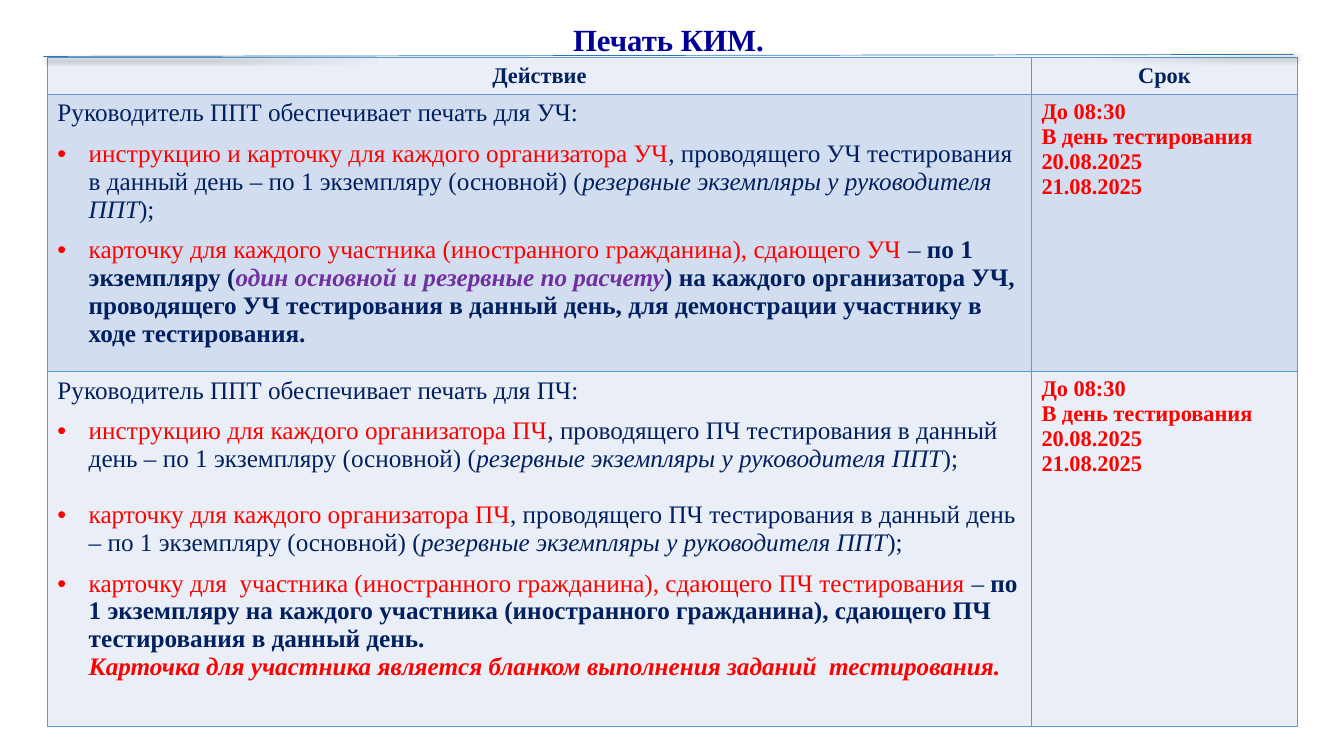
import lxml.etree
import pptx
import pptx.dml.color
import pptx.enum.shapes
import pptx.enum.text
import pptx.oxml
import pptx.oxml.ns
import pptx.util

Inches = pptx.util.Inches
ALIGN = pptx.enum.text.PP_ALIGN
ANCHOR = pptx.enum.text.MSO_ANCHOR
FONT = "Times New Roman"
NAVY, RED, PURPLE = "002060", "FF0000", "7030A0"
BORDER, PALE, BLUE = "5B9BD5", "EAEFF7", "D2DEEF"
INDENT = Inches(0.31)

HEADERS = ["Действие", "Срок"]
DEADLINE = ["До 08:30", "В день тестирования", "20.08.2025", "21.08.2025"]
BASIC_COPY = [
    ("день – по 1 экземпляру (основной) (", {}),
    ("резервные экземпляры у руководителя ППТ", {"italic": True}),
    (");", {}),
]


def basic_copy(subject, part):
    """Return the runs of an item that asks for one basic copy."""
    lead = f", проводящего {part} тестирования в данный "
    return [(subject, {"color": RED}), (lead, {})] + BASIC_COPY


ORAL_ITEMS = [
    (9, True, basic_copy("инструкцию и карточку для каждого организатора УЧ", "УЧ")),
    (9, True, [
        ("карточку для каждого участника (иностранного гражданина), сдающего УЧ ", {"color": RED}),
        ("– ", {}),
        ("по 1 экземпляру (", {"bold": True}),
        ("один основной и резервные по расчету", {"color": PURPLE, "bold": True, "italic": True}),
        (") на каждого организатора УЧ, проводящего УЧ тестирования в данный день, "
         "для демонстрации участнику в ходе тестирования.", {"bold": True}),
    ]),
]
WRITTEN_ITEMS = [
    (9, True, basic_copy("инструкцию для каждого организатора ПЧ", "ПЧ")),
    (20, True, basic_copy("карточку для каждого организатора ПЧ", "ПЧ")),
    (9, True, [
        ("карточку для  участника (иностранного гражданина), сдающего ПЧ тестирования ", {"color": RED}),
        ("– ", {}),
        ("по 1 экземпляру на каждого участника (иностранного гражданина), "
         "сдающего ПЧ тестирования в данный день.", {"bold": True}),
    ]),
    (0, False, [("Карточка для участника является бланком выполнения заданий  тестирования.",
                 {"color": RED, "bold": True, "italic": True})]),
]
SECTIONS = [("УЧ", ORAL_ITEMS, BLUE), ("ПЧ", WRITTEN_ITEMS, PALE)]


def rgb(value):
    """Turn a hex string into a colour."""
    return pptx.dml.color.RGBColor.from_string(value)


def add_text(para, text, size=18, color=NAVY, bold=False, italic=False):
    """Append a formatted span to a paragraph."""
    span = para.add_run()
    span.text = text
    span.font.name = FONT
    span.font.size = pptx.util.Pt(size)
    span.font.bold = bold
    span.font.italic = italic
    span.font.color.rgb = rgb(color)


def next_para(frame):
    """Return the empty first paragraph or a new one."""
    first = frame.paragraphs[0]
    return frame.add_paragraph() if first.runs else first


def indent_para(para, bulleted):
    """Indent a paragraph and hang a bullet if asked."""
    properties = para._p.get_or_add_pPr()
    properties.set("marL", str(INDENT))
    properties.set("indent", str(-INDENT if bulleted else 0))
    if bulleted:
        font = lxml.etree.SubElement(properties, pptx.oxml.ns.qn("a:buFont"))
        font.set("typeface", "Arial")
        bullet = lxml.etree.SubElement(properties, pptx.oxml.ns.qn("a:buChar"))
        bullet.set("char", "•")


def style_cell(cell, fill):
    """Give a cell its borders and fill."""
    properties = cell._tc.get_or_add_tcPr()
    for side in ("lnL", "lnR", "lnT", "lnB"):
        properties.append(pptx.oxml.parse_xml(
            f'<a:{side} {pptx.oxml.ns.nsdecls("a")} w="12700"><a:solidFill>'
            f'<a:srgbClr val="{BORDER}"/></a:solidFill></a:{side}>'))
    cell.fill.solid()
    cell.fill.fore_color.rgb = rgb(fill)


def add_title(page, left, top, width, height):
    """Place the heading at the bottom of its box."""
    box = page.shapes.add_textbox(left, top, width, height)
    frame = box.text_frame
    frame.word_wrap = True
    frame.vertical_anchor = ANCHOR.BOTTOM
    para = frame.paragraphs[0]
    para.alignment = ALIGN.CENTER
    para.line_spacing = 0.9
    add_text(para, "Печать КИМ.", size=22, color="000099", bold=True)


def fill_section(action, deadline, part, items):
    """Write the printing duties and the deadline of one test part."""
    intro = next_para(action.text_frame)
    add_text(intro, f"Руководитель ППТ обеспечивает печать для {part}:")
    for gap, bulleted, spans in items:
        para = next_para(action.text_frame)
        para.space_before = pptx.util.Pt(gap)
        indent_para(para, bulleted)
        for text, style in spans:
            add_text(para, text, **style)
    for line in DEADLINE:
        add_text(next_para(deadline.text_frame), line, size=16, color=RED, bold=True)


def add_schedule(page, left, top, width, height):
    """Place the table of duties and deadlines."""
    table = page.shapes.add_table(3, 2, left, top, width, height).table
    table.first_row = False
    table.horz_banding = False
    table.columns[0].width = Inches(9.76)
    table.columns[1].width = width - Inches(9.76)
    header_height, oral_height = Inches(0.35), Inches(2.56)
    heights = [header_height, oral_height, height - header_height - oral_height]
    for row, row_height in zip(table.rows, heights):
        row.height = row_height
    for column, header in enumerate(HEADERS):
        cell = table.cell(0, column)
        style_cell(cell, PALE)
        cell.vertical_anchor = ANCHOR.MIDDLE
        para = cell.text_frame.paragraphs[0]
        para.alignment = ALIGN.CENTER
        add_text(para, header, size=16, bold=True)
    for row, (part, items, fill) in enumerate(SECTIONS, start=1):
        action, deadline = table.cell(row, 0), table.cell(row, 1)
        style_cell(action, fill)
        style_cell(deadline, fill)
        fill_section(action, deadline, part, items)


def add_rule(page, left, top, width, rise):
    """Draw the thin shadowed line under the heading."""
    rule = page.shapes.add_connector(
        pptx.enum.shapes.MSO_CONNECTOR.STRAIGHT, left, top, left + width, top - rise)
    rule.line.color.rgb = rgb("2E75B6")
    rule.line.width = pptx.util.Pt(0.5)
    rule._element.spPr.append(pptx.oxml.parse_xml(
        f'<a:effectLst {pptx.oxml.ns.nsdecls("a")}>'
        '<a:outerShdw blurRad="50800" dist="38100" dir="2700000" algn="tl" rotWithShape="0">'
        '<a:srgbClr val="000000"><a:alpha val="40000"/></a:srgbClr>'
        '</a:outerShdw></a:effectLst>'))


def main():
    """Build and save the deck."""
    deck = pptx.Presentation()
    deck.slide_width = Inches(13.33)
    deck.slide_height = Inches(7.5)
    page = deck.slides.add_slide(deck.slide_layouts[6])
    add_title(page, Inches(0.43), 0, Inches(12.4), Inches(0.63))
    add_schedule(page, Inches(0.47), Inches(0.57), Inches(12.4), Inches(6.43))
    add_rule(page, Inches(0.43), Inches(0.56), Inches(12.4), Inches(0.02))
    deck.save("out.pptx")


if __name__ == "__main__":
    main()
